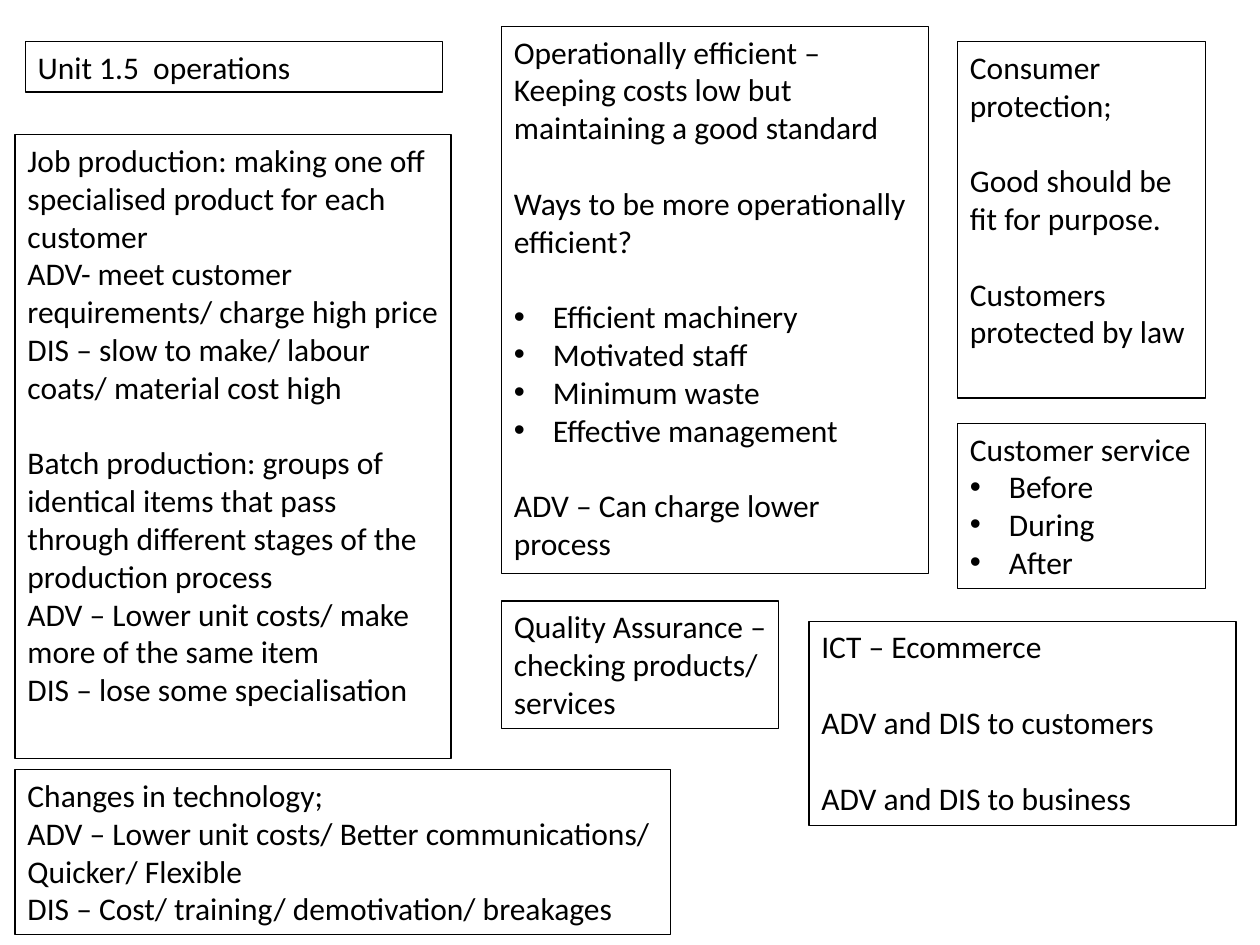
import pptx
import pptx.dml.color
import pptx.enum.text
import pptx.util
from lxml import etree
from pptx.util import Inches

BULLET = "• "

NOTES = [
    ((0.2, 0.33, 3.31, 0.4), [["Unit 1.5  operations"]]),
    ((0.12, 1.07, 3.46, 4.95), [
        ["Job production: making one off specialised product for each customer",
         "ADV- meet customer requirements/ charge high price",
         "DIS – slow to make/ labour coats/ material cost high"],
        ["Batch production: groups of identical items that pass through "
         "different stages of the production process",
         "ADV – Lower unit costs/ make more of the same item",
         "DIS – lose some specialisation"],
    ]),
    ((3.98, 0.21, 3.39, 4.34), [
        ["Operationally efficient –",
         "Keeping costs low but maintaining a good standard"],
        ["Ways to be more operationally efficient?"],
        ["• Efficient machinery", "• Motivated staff",
         "• Minimum waste", "• Effective management"],
        ["ADV – Can charge lower process"],
    ]),
    ((0.12, 6.11, 5.2, 1.31), [
        ["Changes in technology;",
         "ADV – Lower unit costs/ Better communications/ Quicker/ Flexible",
         "DIS – Cost/ training/ demotivation/ breakages"],
    ]),
    ((3.98, 4.77, 2.2, 1.01), [
        ["Quality Assurance – checking products/ services"],
    ]),
    ((7.6, 3.36, 1.97, 1.31), [
        ["Customer service", "• Before", "• During", "• After"],
    ]),
    ((7.6, 0.33, 1.97, 2.83), [
        ["Consumer protection;"],
        ["Good should be fit for purpose."],
        ["Customers protected by law"],
    ]),
    ((6.42, 4.93, 3.39, 1.62), [
        ["ICT – Ecommerce"],
        ["ADV and DIS to customers"],
        ["ADV and DIS to business"],
    ]),
]

THEME = {
    "font": "Calibri",
    "size": pptx.util.Pt(18),
    "ink": pptx.dml.color.RGBColor(0, 0, 0),
    "line": pptx.util.Pt(0.75),
    "block_gap": pptx.util.Pt(21.6),
    "indent": Inches(0.31),
}


def add_bullet(para):
    properties = para._p.get_or_add_pPr()
    properties.set("marL", str(THEME["indent"]))
    properties.set("indent", str(-THEME["indent"]))
    namespace = pptx.oxml.ns.qn
    etree.SubElement(properties, namespace("a:buFont")).set("typeface", "Arial")
    etree.SubElement(properties, namespace("a:buChar")).set("char", BULLET.strip())


def write_line(para, line, starts_block):
    para.font.name = THEME["font"]
    para.font.size = THEME["size"]
    para.font.color.rgb = THEME["ink"]
    if starts_block:
        para.space_before = THEME["block_gap"]
    if line.startswith(BULLET):
        add_bullet(para)
    para.text = line.removeprefix(BULLET)


def add_note(page, place, blocks):
    box = page.shapes.add_textbox(*map(Inches, place))
    box.line.color.rgb = THEME["ink"]
    box.line.width = THEME["line"]
    frame = box.text_frame
    frame.word_wrap = True
    frame.auto_size = pptx.enum.text.MSO_AUTO_SIZE.NONE
    for block_index, block in enumerate(blocks):
        for line_index, line in enumerate(block):
            first = block_index == line_index == 0
            para = frame.paragraphs[0] if first else frame.add_paragraph()
            write_line(para, line, line_index == 0 and not first)


def main():
    deck = pptx.Presentation()
    deck.slide_width, deck.slide_height = Inches(10), Inches(7.5)
    page = deck.slides.add_slide(deck.slide_layouts[6])
    for place, blocks in NOTES:
        add_note(page, place, blocks)
    deck.save("out.pptx")


if __name__ == "__main__":
    main()
